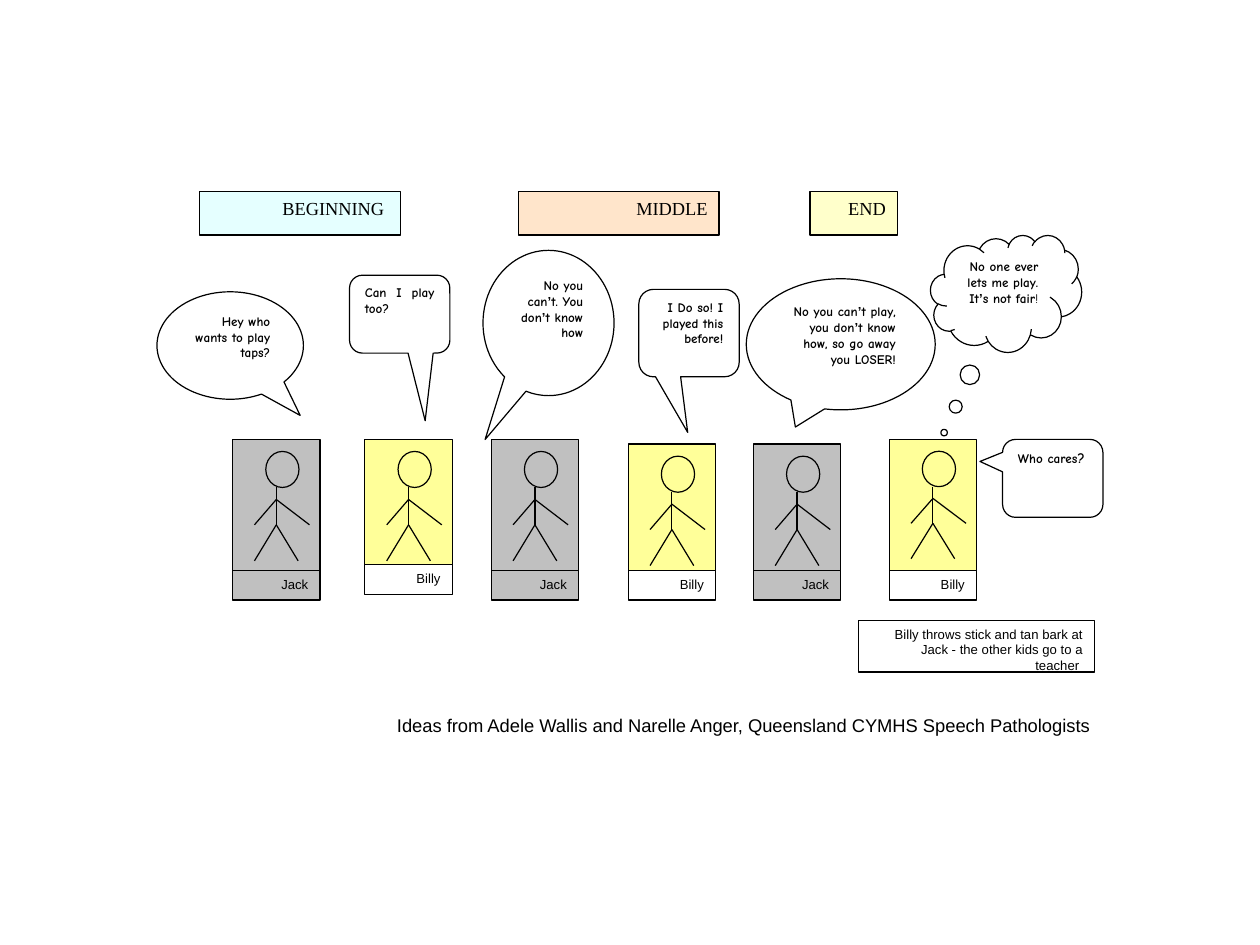
from dataclasses import dataclass
from itertools import groupby
from typing import Optional

from lxml.etree import SubElement
from pptx import Presentation
from pptx.dml.color import RGBColor
from pptx.enum.shapes import MSO_CONNECTOR, MSO_SHAPE
from pptx.enum.text import MSO_ANCHOR, PP_ALIGN
from pptx.oxml.ns import qn
from pptx.util import Inches, Pt

BLACK = RGBColor(0x00, 0x00, 0x00)
WHITE = RGBColor(0xFF, 0xFF, 0xFF)
GREY = RGBColor(0xC0, 0xC0, 0xC0)
YELLOW = RGBColor(0xFF, 0xFF, 0x99)
ORANGE = RGBColor(0xFF, 0xCC, 0x99)
CYAN = RGBColor(0xCC, 0xFF, 0xFF)

SANS, SERIF, COMIC = "Arial", "Times New Roman", "Comic Neue"
ELLIPSE = MSO_SHAPE.OVAL_CALLOUT
ROUND = MSO_SHAPE.ROUNDED_RECTANGULAR_CALLOUT
CLOUD = MSO_SHAPE.CLOUD_CALLOUT
RIGHT, JUSTIFY = PP_ALIGN.RIGHT, PP_ALIGN.JUSTIFY

# The slide is a grid of square cells, ten to the inch
CELL = Inches(0.1)
COLS, ROWS = 106.7, 80


@dataclass
class Box:
    col: float
    row: float
    cols: float
    rows: float

    def emu(self) -> list[int]:
        return [round(n * CELL) for n in (self.col, self.row, self.cols, self.rows)]

    def share(self, x: float, y: float, w: float, h: float) -> "Box":
        """Box given by shares of this one."""
        return Box(self.col + x * self.cols, self.row + y * self.rows,
                   w * self.cols, h * self.rows)


@dataclass
class Bubble:
    kind: MSO_SHAPE
    box: Box
    tail: tuple[float, float]
    text: str
    align: PP_ALIGN = RIGHT
    mark: str = ""  # closing mark with its own look
    mark_size: float = 8
    mark_bold: bool = True


@dataclass
class Header:
    text: str
    col: float
    cols: float
    color: RGBColor


@dataclass
class Person:
    name: str
    col: float
    row: float
    rows: float = 11.3
    label_row: float = 48.3


HEADERS = [
    Header("BEGINNING ", 16.9, 17, CYAN),
    Header("MIDDLE", 43.9, 17, ORANGE),
    Header("END", 68.6, 7.4, YELLOW),
]
BUBBLES = [
    Bubble(ELLIPSE, Box(13.3, 24.7, 12.4, 9.1), (0.478, 0.651), "Hey who wants to play taps?"),
    Bubble(ROUND, Box(29.6, 23.3, 8.5, 6.6), (0.254, 1.367), "Can I play too?", JUSTIFY),
    Bubble(ELLIPSE, Box(40.9, 21.2, 11.1, 12.3), (-0.484, 0.802),
           "No you can’t. You don’t know how"),
    Bubble(ROUND, Box(54.1, 24.5, 8.5, 7.4), (-0.013, 1.136), "I Do so! I played this before!"),
    Bubble(CLOUD, Box(78.8, 19.9, 12.8, 9.9), (-0.41, 1.189),
           "No one ever lets me play. It’s not fair", mark="!", mark_bold=False),
    Bubble(ELLIPSE, Box(63.2, 23.6, 16, 11.1), (-0.24, 0.631),
           "No you can’t play, you don’t know how, so go away you LOSER!"),
    Bubble(ROUND, Box(84.9, 37.2, 8.5, 6.6), (-0.726, -0.217), "Who cares", JUSTIFY,
           mark="?", mark_size=8.8),
]
PEOPLE = [
    Person("Jack", 19.7, 37.2),
    Person("Billy", 30.9, 37.2, label_row=47.8),
    Person("Jack", 41.6, 37.2),
    Person("Billy", 53.2, 37.6),
    Person("Jack", 63.8, 37.6),
    Person("Billy", 75.3, 37.2, rows=11.1),
]
# Shares of a person's frame: head box, then limbs as x1, y1, x2, y2
HEAD = (0.38, 0.09, 0.38, 0.27)
LIMBS = [
    (0.5, 0.36, 0.5, 0.64),
    (0.5, 0.64, 0.25, 0.91),
    (0.5, 0.64, 0.75, 0.91),
    (0.5, 0.45, 0.25, 0.64),
    (0.5, 0.45, 0.88, 0.64),
]


def add_box(s, box: Box, fill: RGBColor, kind=MSO_SHAPE.RECTANGLE,
            alpha: Optional[int] = None):
    sp = s.shapes.add_shape(kind, *box.emu())
    sp.shadow.inherit = False
    sp.fill.solid()
    sp.fill.fore_color.rgb = fill
    if alpha is not None:
        color = sp._element.spPr.find(qn("a:solidFill") + "/" + qn("a:srgbClr"))
        SubElement(color, qn("a:alpha")).set("val", str(alpha * 1000))
    sp.line.color.rgb = BLACK
    sp.line.width = Pt(0.75)
    return sp


def write(sp, text: str, font: str, size: float, align=RIGHT, bold=False):
    """Write one paragraph, with curly apostrophes in the plain font."""
    tf = sp.text_frame
    tf.word_wrap = True
    tf.vertical_anchor = MSO_ANCHOR.TOP
    p = tf.paragraphs[0]
    p.alignment = align
    p.font.name, p.font.size, p.font.bold = font, Pt(size), bold
    p.font.color.rgb = BLACK
    for is_quote, chars in groupby(text, lambda c: c == "’"):
        r = p.add_run()
        r.text = "".join(chars)
        r.font.color.rgb = BLACK
        if is_quote:
            r.font.name = SANS
    return p


def add_bubble(s, b: Bubble) -> None:
    sp = add_box(s, b.box, WHITE, b.kind)
    sp.adjustments[0], sp.adjustments[1] = b.tail
    p = write(sp, b.text, COMIC, 8, b.align, bold=True)
    if b.mark:
        r = p.add_run()
        r.text = b.mark
        r.font.size, r.font.bold = Pt(b.mark_size), b.mark_bold
        r.font.color.rgb = BLACK


def add_person(s, person: Person) -> None:
    frame = Box(person.col, person.row, 7.4, person.rows)
    fill, label_fill = (GREY, GREY) if person.name == "Jack" else (YELLOW, WHITE)
    add_box(s, frame, fill)
    add_box(s, frame.share(*HEAD), fill, MSO_SHAPE.OVAL)
    for x1, y1, x2, y2 in LIMBS:
        left, top, width, height = frame.share(x1, y1, x2 - x1, y2 - y1).emu()
        limb = s.shapes.add_connector(MSO_CONNECTOR.STRAIGHT, left, top,
                                      left + width, top + height)
        limb.line.color.rgb = BLACK
        limb.line.width = Pt(0.75)
        SubElement(limb._element.spPr, qn("a:effectLst"))
    label = add_box(s, Box(person.col, person.label_row, 7.4, 2.5), label_fill)
    write(label, person.name, SANS, 8)


def main() -> None:
    prs = Presentation()
    prs.slide_width, prs.slide_height = round(COLS * CELL), ROWS * CELL
    s = prs.slides.add_slide(prs.slide_layouts[6])

    # Story stages
    for h in HEADERS:
        sp = add_box(s, Box(h.col, 16.2, h.cols, 3.7), h.color, alpha=50)
        write(sp, h.text, SERIF, 11.2)

    # Conversation
    for b in BUBBLES:
        add_bubble(s, b)
    for person in PEOPLE:
        add_person(s, person)

    # Outcome and credit
    outcome = add_box(s, Box(72.7, 52.5, 20, 4.4), WHITE)
    outcome.text_frame.margin_left = Inches(0.15)
    write(outcome, "Billy throws stick and tan bark at Jack - the other kids go to a teacher ",
          SANS, 8)
    credit = s.shapes.add_textbox(*Box(17.7, 60, 75.6, 3.1).emu())
    write(credit, "Ideas from Adele Wallis and Narelle Anger, Queensland CYMHS Speech Pathologists",
          SANS, 11.2)

    prs.save("out.pptx")


if __name__ == "__main__":
    main()
